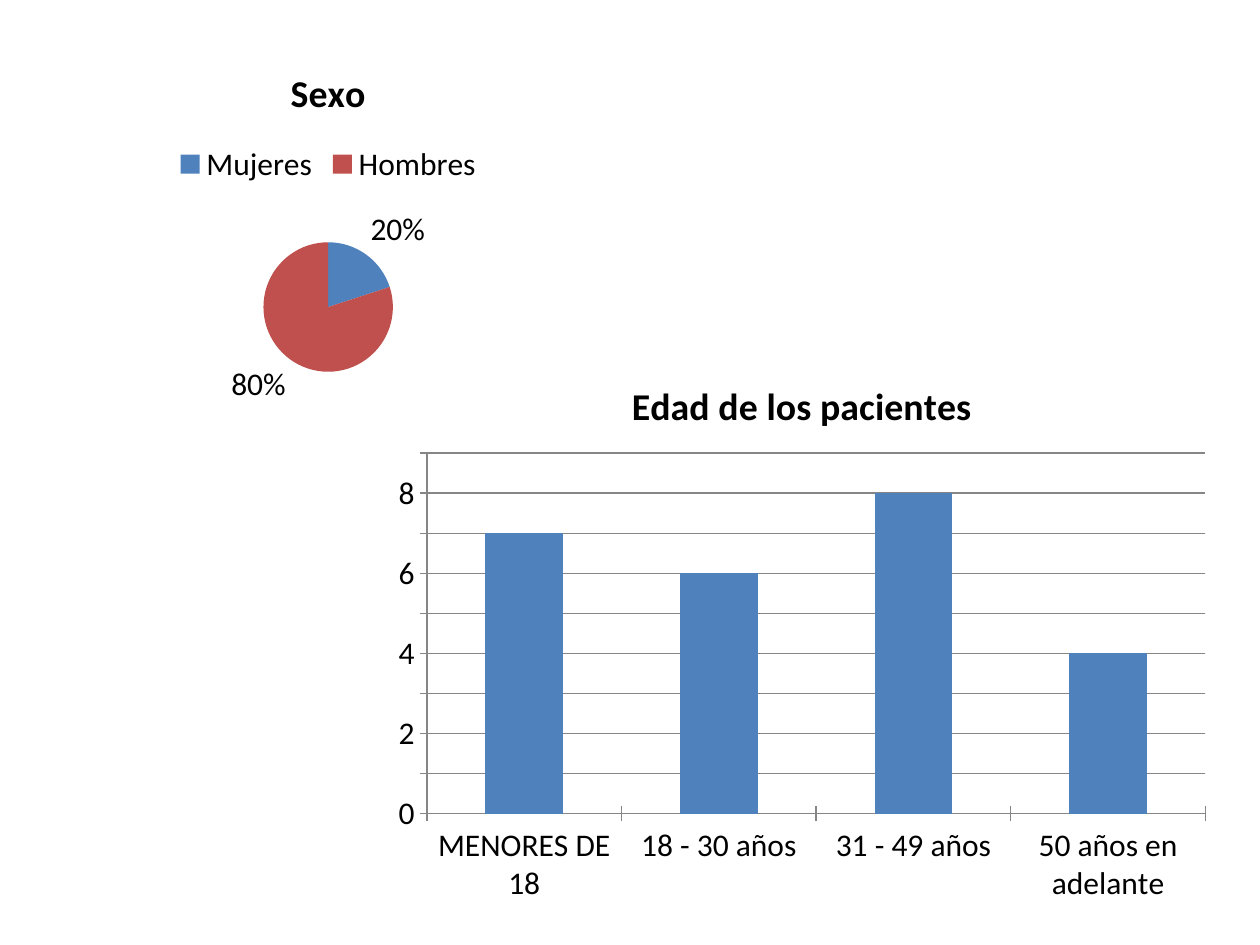
from dataclasses import dataclass

from pptx import Presentation
from pptx import util as u
from pptx.chart.chart import Chart
from pptx.chart.data import CategoryChartData
from pptx.dml.color import RGBColor
from pptx.enum import chart as ce
from pptx.slide import Slide


@dataclass(frozen=True)
class Theme:
    font: str = "Calibri"
    ink: RGBColor = RGBColor(0x00, 0x00, 0x00)
    axis: RGBColor = RGBColor(0x86, 0x86, 0x86)
    blue: RGBColor = RGBColor(0x4F, 0x81, 0xBD)
    red: RGBColor = RGBColor(0xC0, 0x50, 0x4D)
    body_size: float = 18
    title_size: float = 21.6


@dataclass(frozen=True)
class Survey:
    title: str
    kind: ce.XL_CHART_TYPE
    answers: dict[str, int]
    box: tuple[float, float, float, float]


THEME = Theme()

AGES = Survey(
    "Edad de los pacientes",
    ce.XL_CHART_TYPE.COLUMN_STACKED,
    {"MENORES DE 18": 7, "18 - 30 años": 6, "31 - 49 años": 8, "50 años en adelante": 4},
    (3.03, 2.81, 6.67, 4.44),
)
SEXES = Survey(
    "Sexo",
    ce.XL_CHART_TYPE.PIE,
    {"Mujeres": 20, "Hombres": 80},
    (0.35, 0.36, 4.51, 3.01),
)


def add_survey(slide: Slide, survey: Survey) -> Chart:
    counts = CategoryChartData()
    counts.categories = list(survey.answers)
    counts.add_series("Series 1", list(survey.answers.values()))
    place = [u.Inches(length) for length in survey.box]
    chart = slide.shapes.add_chart(survey.kind, *place, counts).chart
    chart.font.name = THEME.font
    chart.font.size = u.Pt(THEME.body_size)
    chart.font.color.rgb = THEME.ink

    chart.has_title = True
    heading = chart.chart_title.text_frame
    heading.text = survey.title
    heading_font = heading.paragraphs[0].font
    heading_font.name = THEME.font
    heading_font.size = u.Pt(THEME.title_size)
    heading_font.bold = True
    heading_font.color.rgb = THEME.ink
    chart.chart_title.include_in_layout = False
    return chart


def style_ages(chart: Chart) -> None:
    chart.has_legend = False
    bars = chart.plots[0]
    bars.vary_by_categories = False
    bars.gap_width = 150
    bars.overlap = 100
    fill = bars.series[0].format.fill
    fill.solid()
    fill.fore_color.rgb = THEME.blue

    chart.value_axis.has_major_gridlines = True
    gridlines = chart.value_axis.major_gridlines
    for axis in (chart.category_axis, chart.value_axis):
        axis.major_tick_mark = ce.XL_TICK_MARK.CROSS
    for ruled in (chart.category_axis, chart.value_axis, gridlines):
        ruled.format.line.color.rgb = THEME.axis
        ruled.format.line.width = u.Pt(0.75)


def style_sexes(chart: Chart) -> None:
    chart.has_legend = True
    chart.legend.position = ce.XL_LEGEND_POSITION.TOP
    chart.legend.include_in_layout = False
    pie = chart.plots[0]
    pie.vary_by_categories = True
    for index, color in enumerate((THEME.blue, THEME.red)):
        fill = pie.series[0].points[index].format.fill
        fill.solid()
        fill.fore_color.rgb = color

    shares = pie.series[0].data_labels
    shares.show_percentage = True
    shares.show_value = False
    shares.number_format = "0%"
    shares.number_format_is_linked = False
    shares.position = ce.XL_LABEL_POSITION.OUTSIDE_END


def main() -> None:
    deck = Presentation()
    deck.slide_width = u.Inches(10)
    deck.slide_height = u.Inches(7.5)
    slide = deck.slides.add_slide(deck.slide_layouts[6])
    style_ages(add_survey(slide, AGES))
    style_sexes(add_survey(slide, SEXES))
    deck.save("out.pptx")


if __name__ == "__main__":
    main()
